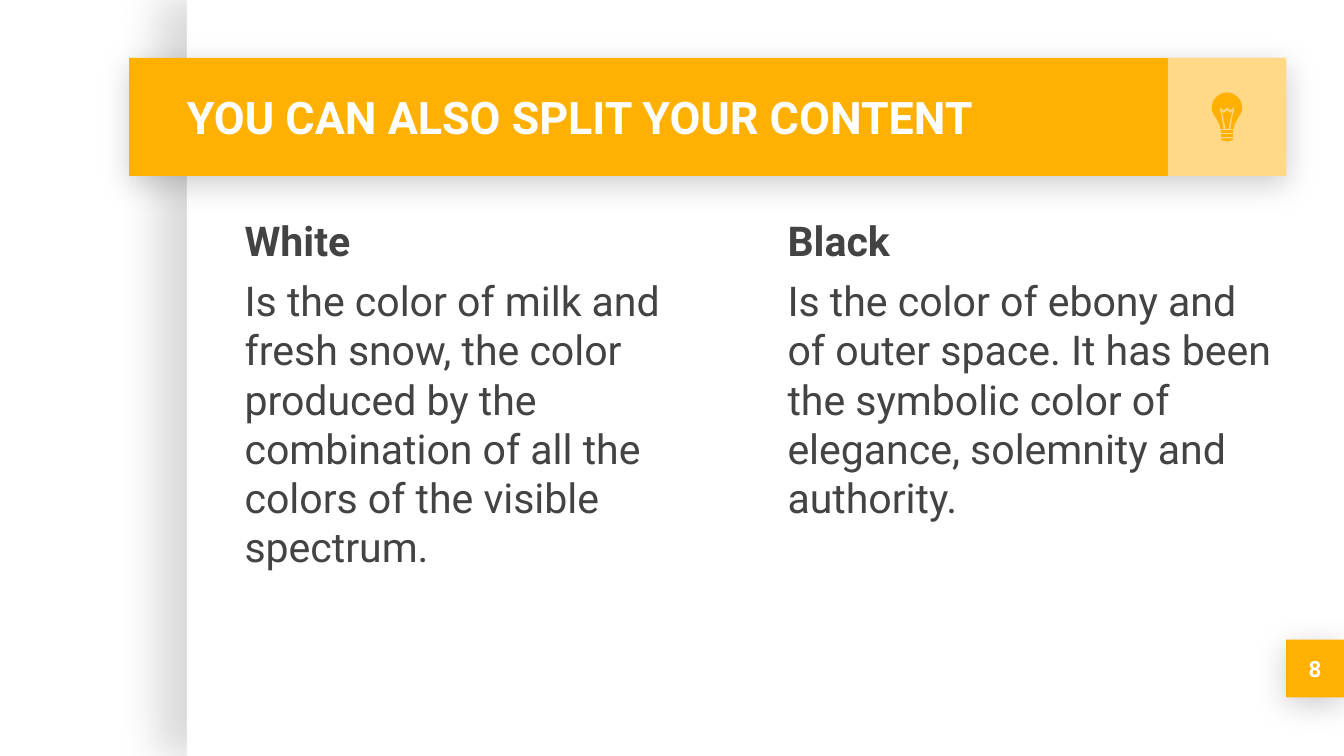
from dataclasses import dataclass

from lxml import etree
from pptx import Presentation
from pptx import util as u
from pptx.dml.color import RGBColor
from pptx.enum import shapes, text
from pptx.oxml import ns


@dataclass(frozen=True)
class Theme:
    font: str = "Roboto"
    accent: RGBColor = RGBColor(0xFF, 0xB0, 0x00)
    paper: RGBColor = RGBColor(0xFF, 0xFF, 0xFF)
    ink: RGBColor = RGBColor(0x43, 0x43, 0x43)
    title_size: int = 24
    body_size: int = 22
    number_size: int = 12


THEME = Theme()
WIDTH = 10
HEIGHT = WIDTH * 9 / 16
PANEL_LEFT = 1.39
BANNER = (0.96, 0.43, 8.61, 0.88)
COLUMNS_BOX = (1.72, 1.5, 7.85, 3.7)
NUMBER_BOX = (9.57, 4.76, 0.43, 0.43)
COLUMN_GAP = 0.23

# Right halves of the bulb's parts, in thousandths of an inch from its centre
BULB_HALVES = [
    # glass
    [(0, -182), (20, -180), (40, -174), (60, -164), (80, -148), (98, -125),
     (109, -100), (113, -70), (110, -45), (100, -20), (80, 10), (65, 40),
     (55, 60), (50, 90), (25, 90), (40, 0), (55, -60), (50, -70), (25, -50),
     (0, -70)],
    # filament
    [(0, -50), (20, -30), (30, -30), (40, -50), (10, 90)],
    # screw rings and cap
    [(45, 100), (45, 120)],
    [(45, 130), (45, 150)],
    [(45, 160), (45, 170), (10, 183)],
]


def place(shape, box):
    shape.left, shape.top, shape.width, shape.height = map(u.Inches, box)


def paint(shape, color):
    shape.fill.solid()
    shape.fill.fore_color.rgb = color
    shape.line.fill.background()
    shape.shadow.inherit = False


def add_block(slide, box, color):
    block = slide.shapes.add_shape(shapes.MSO_SHAPE.RECTANGLE, *map(u.Inches, box))
    paint(block, color)
    return block


def set_alpha(color_element, percent):
    etree.SubElement(color_element, ns.qn("a:alpha"), val=str(percent * 1000))


def add_shadow(shape, alpha, blur, distance, angle):
    effects = shape.element.spPr.find(ns.qn("a:effectLst"))
    shadow = etree.SubElement(
        effects, ns.qn("a:outerShdw"), blurRad=str(u.Pt(blur)),
        dist=str(u.Pt(distance)), dir=str(angle * 60000), algn="bl", rotWithShape="0")
    set_alpha(etree.SubElement(shadow, ns.qn("a:srgbClr"), val="000000"), alpha)


def set_frame(frame, anchor):
    frame.word_wrap = True
    frame.auto_size = text.MSO_AUTO_SIZE.NONE
    frame.vertical_anchor = anchor
    frame.margin_left = frame.margin_right = u.Inches(0.1)
    frame.margin_top = frame.margin_bottom = u.Inches(0.1)


def style(paragraph, size, color, bold=True, align=text.PP_ALIGN.LEFT, before=0):
    paragraph.alignment = align
    paragraph.space_before = u.Pt(before)
    font = paragraph.font
    font.name, font.size, font.bold = THEME.font, u.Pt(size), bold
    font.color.rgb = color


def bring_to_front(slide, shape):
    slide.shapes.element.append(shape.element)


def add_bulb(slide, center_x, center_y):
    bulb = slide.shapes.add_group_shape()
    for half in BULB_HALVES:
        outline = half + [(-x, y) for x, y in reversed(half)]
        builder = bulb.shapes.build_freeform(*outline[0], scale=u.Inches(1) / 1000)
        builder.add_line_segments(outline[1:], close=True)
        part = builder.convert_to_shape(u.Inches(center_x), u.Inches(center_y))
        paint(part, THEME.accent)


def add_panel(slide, box):
    add_shadow(add_block(slide, box, THEME.paper), 15, 22.5, 15, 180)


def add_banner(slide, box, heading):
    left, top, width, height = box
    add_shadow(add_block(slide, box, THEME.accent), 20, 16.9, 3.8, 90)

    # Square icon tile at the right end
    tile_left = left + width - height
    tile = add_block(slide, (tile_left, top, height, height), THEME.paper)
    set_alpha(tile.element.spPr.find(".//" + ns.qn("a:srgbClr")), 53)
    add_bulb(slide, tile_left + height / 2, top + height / 2)

    title = slide.shapes.title
    place(title, (left + 0.33, top, width - height - 0.36, height))
    title.text_frame.text = heading
    set_frame(title.text_frame, text.MSO_ANCHOR.MIDDLE)
    style(title.text_frame.paragraphs[0], THEME.title_size, THEME.paper)
    bring_to_front(slide, title)


def add_columns(slide, box, columns):
    left, top, width, height = box
    column_width = (width - COLUMN_GAP * (len(columns) - 1)) / len(columns)
    for i, (heading, description) in enumerate(columns):
        column = slide.placeholders[i + 1]
        place(column, (left + i * (column_width + COLUMN_GAP), top, column_width, height))
        frame = column.text_frame
        frame.text = f"{heading}\n{description}"
        set_frame(frame, text.MSO_ANCHOR.TOP)
        for paragraph, bold, before in zip(frame.paragraphs, (True, False), (0, 6)):
            properties = paragraph._p.get_or_add_pPr()
            properties.set("marL", "0")
            properties.set("indent", "0")
            etree.SubElement(properties, ns.qn("a:buNone"))
            style(paragraph, THEME.body_size, THEME.ink, bold, before=before)
        bring_to_front(slide, column)


def add_page_number(slide, box, number):
    badge = add_block(slide, box, THEME.accent)
    add_shadow(badge, 20, 16.9, 3.8, 90)
    badge.text_frame.text = str(number)
    set_frame(badge.text_frame, text.MSO_ANCHOR.MIDDLE)
    style(badge.text_frame.paragraphs[0], THEME.number_size, THEME.paper,
          align=text.PP_ALIGN.CENTER)


def main():
    deck = Presentation()
    deck.slide_width, deck.slide_height = u.Inches(WIDTH), u.Inches(HEIGHT)
    slide = deck.slides.add_slide(deck.slide_layouts.get_by_name("Two Content"))

    add_panel(slide, (PANEL_LEFT, 0, WIDTH - PANEL_LEFT, HEIGHT))
    add_banner(slide, BANNER, "YOU CAN ALSO SPLIT YOUR CONTENT")
    add_columns(slide, COLUMNS_BOX, [
        ("White", "Is the color of milk and fresh snow, the color produced by "
                  "the combination of all the colors of the visible spectrum."),
        ("Black", "Is the color of ebony and of outer space. It has been the "
                  "symbolic color of elegance, solemnity and authority."),
    ])
    add_page_number(slide, NUMBER_BOX, 8)
    deck.save("out.pptx")


if __name__ == "__main__":
    main()
